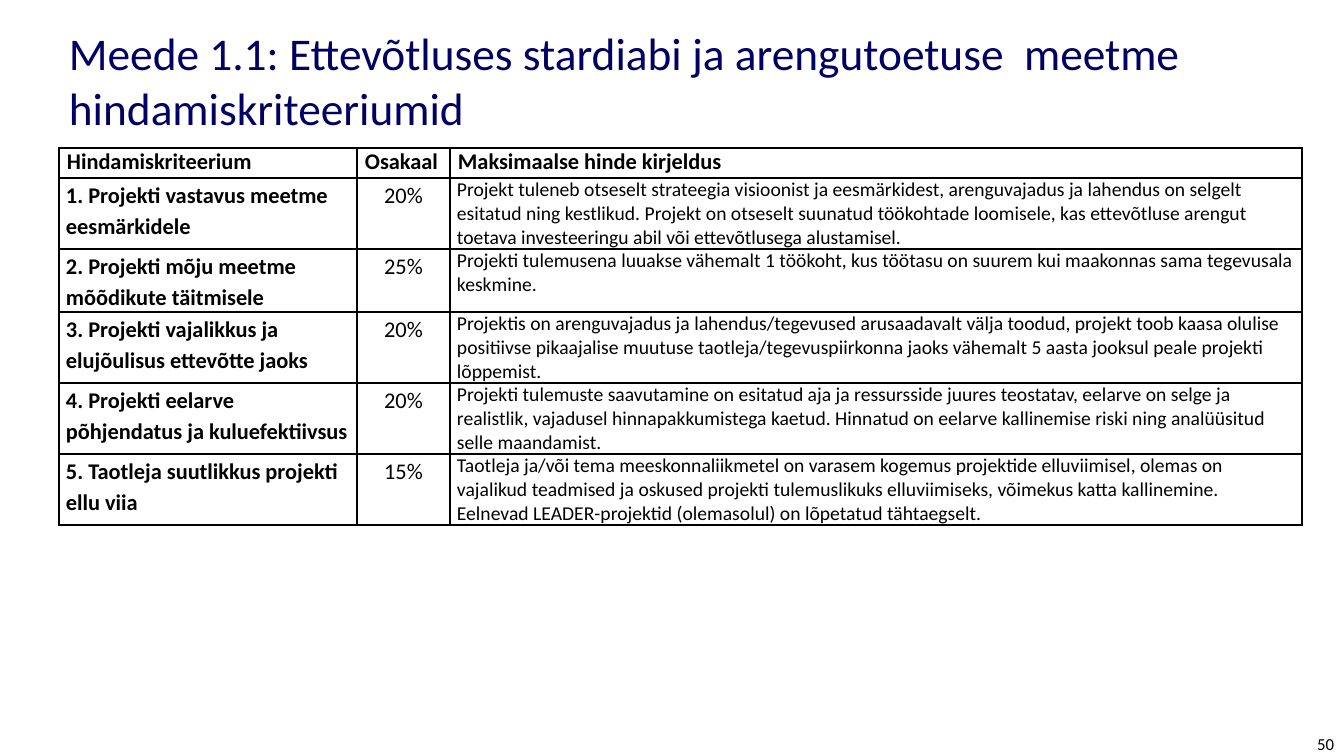
import pptx
import pptx.dml.color
import pptx.enum.text
import pptx.oxml
import pptx.oxml.ns
import pptx.util

PX = 914400 / 100.8
FONT = "Calibri"
ALIGN = pptx.enum.text.PP_ALIGN
ANCHOR = pptx.enum.text.MSO_ANCHOR


def px(length):
    return pptx.util.Emu(round(length * PX))


def style(para, size, color, bold=False):
    para.font.name = FONT
    para.font.size = pptx.util.Pt(size)
    para.font.bold = bold
    para.font.color.rgb = pptx.dml.color.RGBColor.from_string(color)


deck = pptx.Presentation()
deck.slide_width, deck.slide_height = px(1344), px(756)
page = deck.slides.add_slide(deck.slide_layouts[6])

# Title and page number
labels = [
    ("Meede 1.1: Ettevõtluses stardiabi ja arengutoetuse  meetme hindamiskriteeriumid",
     (59, 17, 1206, 126), 32.4, "010163", ALIGN.LEFT),
    ("50", (1180, 731, 164, 25), 12, "000000", ALIGN.RIGHT),
]
for text, place, size, color, align in labels:
    frame = page.shapes.add_textbox(*map(px, place)).text_frame
    frame.word_wrap = True
    frame.vertical_anchor = ANCHOR.MIDDLE
    para = frame.paragraphs[0]
    para.text = text
    para.alignment = align
    style(para, size, color)

# Criteria, weights and descriptions of the top mark
rows = [
    ("Hindamiskriteerium", "Osakaal", "Maksimaalse hinde kirjeldus"),
    ("1. Projekti vastavus meetme eesmärkidele", "20%",
     "Projekt tuleneb otseselt strateegia visioonist ja eesmärkidest, arenguvajadus ja "
     "lahendus on selgelt esitatud ning kestlikud. Projekt on otseselt suunatud töökohtade "
     "loomisele, kas ettevõtluse arengut toetava investeeringu abil või ettevõtlusega "
     "alustamisel."),
    ("2. Projekti mõju meetme mõõdikute täitmisele", "25%",
     "Projekti tulemusena luuakse vähemalt 1 töökoht, kus töötasu on suurem kui maakonnas "
     "sama tegevusala keskmine."),
    ("3. Projekti vajalikkus ja elujõulisus ettevõtte jaoks", "20%",
     "Projektis on arenguvajadus ja lahendus/tegevused arusaadavalt välja toodud, projekt "
     "toob kaasa olulise positiivse pikaajalise muutuse taotleja/tegevuspiirkonna jaoks "
     "vähemalt 5 aasta jooksul peale projekti lõppemist."),
    ("4. Projekti eelarve põhjendatus ja kuluefektiivsus", "20%",
     "Projekti tulemuste saavutamine on esitatud aja ja ressursside juures teostatav, "
     "eelarve on selge ja realistlik, vajadusel hinnapakkumistega kaetud. Hinnatud on "
     "eelarve kallinemise riski ning analüüsitud selle maandamist."),
    ("5. Taotleja suutlikkus projekti ellu viia", "15%",
     "Taotleja ja/või tema meeskonnaliikmetel on varasem kogemus projektide elluviimisel, "
     "olemas on vajalikud teadmised ja oskused projekti tulemuslikuks elluviimiseks, "
     "võimekus katta kallinemine. Eelnevad LEADER-projektid (olemasolul) on lõpetatud "
     "tähtaegselt."),
]
widths = [298, 93, 852]
heights = [30, 71, 63, 71, 71, 71]
last_row, last_column = len(rows) - 1, len(widths) - 1

table = page.shapes.add_table(len(rows), len(widths), px(59), px(148),
                              px(sum(widths)), px(sum(heights))).table
table.first_row = table.horz_banding = False
for column, width in zip(table.columns, widths):
    column.width = px(width)

for r, (texts, height) in enumerate(zip(rows, heights)):
    table.rows[r].height = px(height)
    for c, text in enumerate(texts):
        cell = table.cell(r, c)
        header = r == 0
        across, down = (8, 4) if header else (7, 0)
        cell.margin_left = cell.margin_right = px(across)
        cell.margin_top = cell.margin_bottom = px(down)
        cell.vertical_anchor = ANCHOR.MIDDLE if header else ANCHOR.TOP

        # Borders: heavier on the outer edge of the table
        outer = {"L": c == 0, "R": c == last_column, "T": header, "B": r == last_row}
        properties = cell._tc.get_or_add_tcPr()
        for side, heavy in outer.items():
            properties.append(pptx.oxml.parse_xml(
                f'<a:ln{side} {pptx.oxml.ns.nsdecls("a")} w="{19050 if heavy else 12700}">'
                f'<a:solidFill><a:srgbClr val="000000"/></a:solidFill></a:ln{side}>'))
        cell.fill.solid()
        cell.fill.fore_color.rgb = pptx.dml.color.RGBColor.from_string("FFFFFF")

        # Text
        para = cell.text_frame.paragraphs[0]
        para.text = text
        if header:
            para.line_spacing = 0.8
        elif c < last_column:
            para.line_spacing = 1.15
            para.space_after = pptx.util.Pt(6)
        if c == 1 and not header:
            para.alignment = ALIGN.CENTER
        size = 14 if c == last_column and not header else 16
        style(para, size, "000000", bold=header or c == 0)

deck.save("out.pptx")
